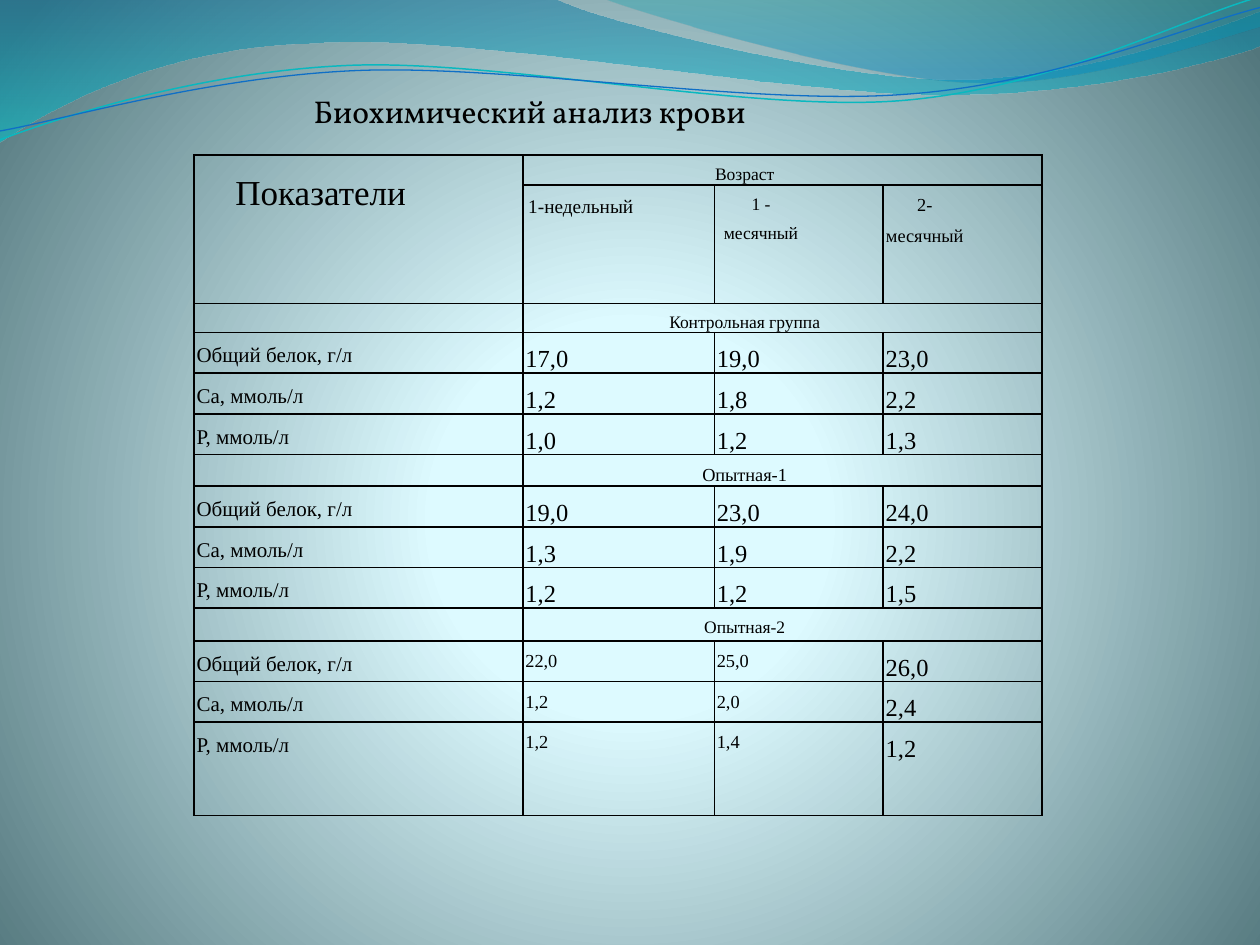
import pptx
import pptx.util
import pptx.dml.color
import pptx.enum.text
import pptx.oxml
import pptx.oxml.ns
import math
from dataclasses import dataclass
from lxml import etree

W, H = 10, 7.5
Inches, Pt = pptx.util.Inches, pptx.util.Pt
RGB = pptx.dml.color.RGBColor
ALIGN = pptx.enum.text.PP_ALIGN
qn = pptx.oxml.ns.qn


@dataclass(frozen=True)
class Theme:
    title_font: str = "Vollkorn"
    table_font: str = "Times New Roman"
    ink: str = "000000"
    title: float = 18
    corner: float = 20
    label: float = 12
    value: float = 14
    small: float = 10.5
    tiny: float = 10
    week: float = 11
    border: float = 1


THEME = Theme()

# Background and waves: (position %, colour, opacity %)
BACKDROP = [(0, "DEFBFF", 100), (25, "DDFAFF", 100), (100, "52767C", 100)]
WIDE_FILL = [(0, "0074A1", 45), (100, "00C6CF", 55)]
CORNER_FILL = [(0, "00A1A9", 30), (80, "008BBF", 45)]
# Each wave is a start point, then line ends (2 numbers) or Bézier curves (6)
WIDE_WAVE = [(0, 0), (4.4, -0.01), (4.76, 0.17, 6.64, 0.63, 7.58, 0.63),
             (8.53, 0.63, 9.58, 0.26, 10, 0.09), (10.01, 0.36),
             (9.83, 0.44, 8.7, 0.76, 7.46, 0.75),
             (6.22, 0.75, 3.82, 0.28, 2.57, 0.34),
             (1.29, 0.36, 0.46, 0.83, -0.01, 1.13), (0, 0)]
CORNER_WAVE = [(4.79, -0.01), (5.09, 0.11, 6.82, 0.62, 7.69, 0.65),
               (8.56, 0.69, 9.61, 0.32, 10, 0.21), (10, 0), (4.79, -0.01)]
TEAL_LINE = [(0, 1.11), (0.48, 0.93, 1.58, 0.57, 2.77, 0.52),
             (3.95, 0.47, 5.93, 0.89, 7.13, 0.8),
             (8.33, 0.71, 9.38, 0.15, 9.98, -0.02)]
BLUE_LINE = [(0, 1.04), (0.47, 0.96, 1.64, 0.61, 2.83, 0.56),
             (4.03, 0.51, 5.97, 0.84, 7.17, 0.75),
             (8.36, 0.67, 9.41, 0.21, 10, 0.06)]
TILT = -2.7   # degrees, both lines
UNITS = 1000  # outline units to the inch

# Blood test table
COLS = [2.61, 1.52, 1.34, 1.26]
ROWS = [0.24, 0.94, 0.22, 0.28, 0.28, 0.28, 0.25, 0.28, 0.28, 0.28,
        0.26, 0.3, 0.3, 0.74]
AGES = [("1-недельный", THEME.week), ("1 - месячный", THEME.tiny),
        ("2-месячный", THEME.small)]
LABELS = ["Общий белок, г/л", "Са, ммоль/л", "Р, ммоль/л"]
# Group name, its size, sizes of the three value columns, values by label
GROUPS = [
    ("Контрольная группа", THEME.tiny, [THEME.value] * 3,
     ["17,0 19,0 23,0", "1,2 1,8 2,2", "1,0 1,2 1,3"]),
    ("Опытная-1", THEME.small, [THEME.value] * 3,
     ["19,0 23,0 24,0", "1,3 1,9 2,2", "1,2 1,2 1,5"]),
    ("Опытная-2", THEME.tiny, [THEME.small, THEME.small, THEME.value],
     ["22,0 25,0 26,0", "1,2 2,0 2,4", "1,2 1,4 1,2"]),
]
SIDE = 0.02          # cell side margin
HEADING_RIGHT = 0.62  # centred headings sit left of the cell's middle


def gradient(stops, direction):
    gs = "".join(f'<a:gs pos="{pos * 1000}"><a:srgbClr val="{color}">'
                 f'<a:alpha val="{alpha * 1000}"/></a:srgbClr></a:gs>'
                 for pos, color, alpha in stops)
    return (f'<a:gradFill {pptx.oxml.ns.nsdecls("a")} rotWithShape="1">'
            f'<a:gsLst>{gs}</a:gsLst>{direction}</a:gradFill>')


def set_background(s):
    fill = gradient(BACKDROP, '<a:path path="circle"><a:fillToRect l="10000" '
                              't="110000" r="10000" b="100000"/></a:path>')
    bg = pptx.oxml.parse_xml(f'<p:bg {pptx.oxml.ns.nsdecls("p", "a")}><p:bgPr>{fill}'
                             '<a:effectLst/></p:bgPr></p:bg>')
    s.shapes._spTree.addprevious(bg)


def draw_curves(sp, frame, segments, tilt):
    """Fill the shape's outline with curves, turned back by its own tilt."""
    left, top, width, height = frame
    cx, cy = left + width / 2, top + height / 2
    cos, sin = math.cos(math.radians(-tilt)), math.sin(math.radians(-tilt))
    outline = sp._element.find(".//" + qn("a:path"))
    for child in list(outline):
        outline.remove(child)
    for i, seg in enumerate(segments):
        tag = "moveTo" if i == 0 else "lnTo" if len(seg) == 2 else "cubicBezTo"
        step = etree.SubElement(outline, qn(f"a:{tag}"))
        for x, y in zip(seg[::2], seg[1::2]):
            dx, dy = x - cx, y - cy
            px, py = cx - left + dx * cos - dy * sin, cy - top + dx * sin + dy * cos
            etree.SubElement(step, qn("a:pt"), x=str(round(px * UNITS)),
                             y=str(round(py * UNITS)))
    return outline


def add_wave(s, frame, segments, stops=None, line=None, width=0, tilt=0):
    left, top, w, h = (round(v * UNITS) for v in frame)
    builder = s.shapes.build_freeform(left, top, scale=Inches(1) / UNITS)
    builder.add_line_segments([(left + w, top), (left + w, top + h), (left, top + h)])
    sp = builder.convert_to_shape()
    outline = draw_curves(sp, frame, segments, tilt)
    sp.rotation = tilt
    sp.shadow.inherit = False
    sp.fill.background()
    if stops:
        etree.SubElement(outline, qn("a:close"))
        sp.line.fill.background()
        plain = sp._element.spPr.find(qn("a:noFill"))
        fill = gradient(stops, '<a:lin ang="5400000" scaled="0"/>')
        sp._element.spPr.replace(plain, pptx.oxml.parse_xml(fill))
    else:
        sp.line.color.rgb = RGB.from_string(line)
        sp.line.width = Pt(width)


def style_run(r, font, size):
    r.font.name, r.font.size = font, Pt(size)
    r.font.color.rgb = RGB.from_string(THEME.ink)


def add_title(s, text):
    sp = s.shapes.add_textbox(Inches(0.114 * W), Inches(0.091 * H),
                              Inches(0.523 * W), Inches(0.054 * H))
    tf = sp.text_frame
    tf.word_wrap = True
    tf.margin_left = Inches(0.135 * W)
    tf.text = text
    style_run(tf.paragraphs[0].runs[0], THEME.title_font, THEME.title)


def frame_cell(cell):
    tcPr = cell._tc.get_or_add_tcPr()
    for side in ("lnL", "lnR", "lnT", "lnB"):
        ln = etree.SubElement(tcPr, qn(f"a:{side}"), w=str(Pt(THEME.border)))
        solid = etree.SubElement(ln, qn("a:solidFill"))
        etree.SubElement(solid, qn("a:srgbClr"), val=THEME.ink)
    cell.fill.background()
    cell.margin_left = cell.margin_right = Inches(SIDE)
    cell.margin_top = cell.margin_bottom = 0
    # Keeps empty cells from stretching their row
    etree.SubElement(cell.text_frame.paragraphs[0]._p, qn("a:endParaRPr"),
                     sz=str(THEME.tiny * 100))


def write_cell(cell, text, size, heading=False):
    p = cell.text_frame.paragraphs[0]
    p.text = text
    p.line_spacing = 1.5
    if heading:
        p.alignment = ALIGN.CENTER
        cell.margin_right = Inches(HEADING_RIGHT)
    style_run(p.runs[0], THEME.table_font, size)


def add_blood_table(s):
    table = s.shapes.add_table(len(ROWS), len(COLS), Inches(0.154 * W),
                               Inches(0.164 * H), Inches(sum(COLS)),
                               Inches(sum(ROWS))).table
    table.first_row = table.horz_banding = False
    for col, width in zip(table.columns, COLS):
        col.width = Inches(width)
    for row, height in zip(table.rows, ROWS):
        row.height = Inches(height)
    for cell in table.iter_cells():
        frame_cell(cell)

    # Two-row header
    table.cell(0, 0).merge(table.cell(1, 0))
    table.cell(0, 1).merge(table.cell(0, 3))
    write_cell(table.cell(0, 0), "Показатели", THEME.corner, heading=True)
    write_cell(table.cell(0, 1), "Возраст", THEME.tiny, heading=True)
    for c, (age, size) in enumerate(AGES, 1):
        write_cell(table.cell(1, c), age, size, heading=True)

    # One heading row and three value rows for each group
    for g, (name, name_size, sizes, lines) in enumerate(GROUPS):
        top = 2 + g * (len(LABELS) + 1)
        table.cell(top, 1).merge(table.cell(top, 3))
        write_cell(table.cell(top, 1), name, name_size, heading=True)
        for r, (label, line) in enumerate(zip(LABELS, lines), top + 1):
            write_cell(table.cell(r, 0), label, THEME.label)
            for c, (value, size) in enumerate(zip(line.split(), sizes), 1):
                write_cell(table.cell(r, c), value, size)


def main():
    prs = pptx.Presentation()
    prs.slide_width, prs.slide_height = Inches(W), Inches(H)
    s = prs.slides.add_slide(prs.slide_layouts[6])
    set_background(s)
    add_wave(s, (-0.01, -0.01, 10.02, 1.14), WIDE_WAVE, stops=WIDE_FILL)
    add_wave(s, (4.79, -0.01, 5.21, 0.7), CORNER_WAVE, stops=CORNER_FILL)
    add_wave(s, (-0.02, 0.22, 10.02, 0.71), TEAL_LINE, line="0AB8BF",
             width=0.85, tilt=TILT)
    add_wave(s, (-0.02, 0.3, 10.03, 0.58), BLUE_LINE, line="0F6FC6",
             width=0.75, tilt=TILT)
    add_blood_table(s)
    add_title(s, "Биохимический анализ крови")
    prs.save("out.pptx")


if __name__ == "__main__":
    main()
